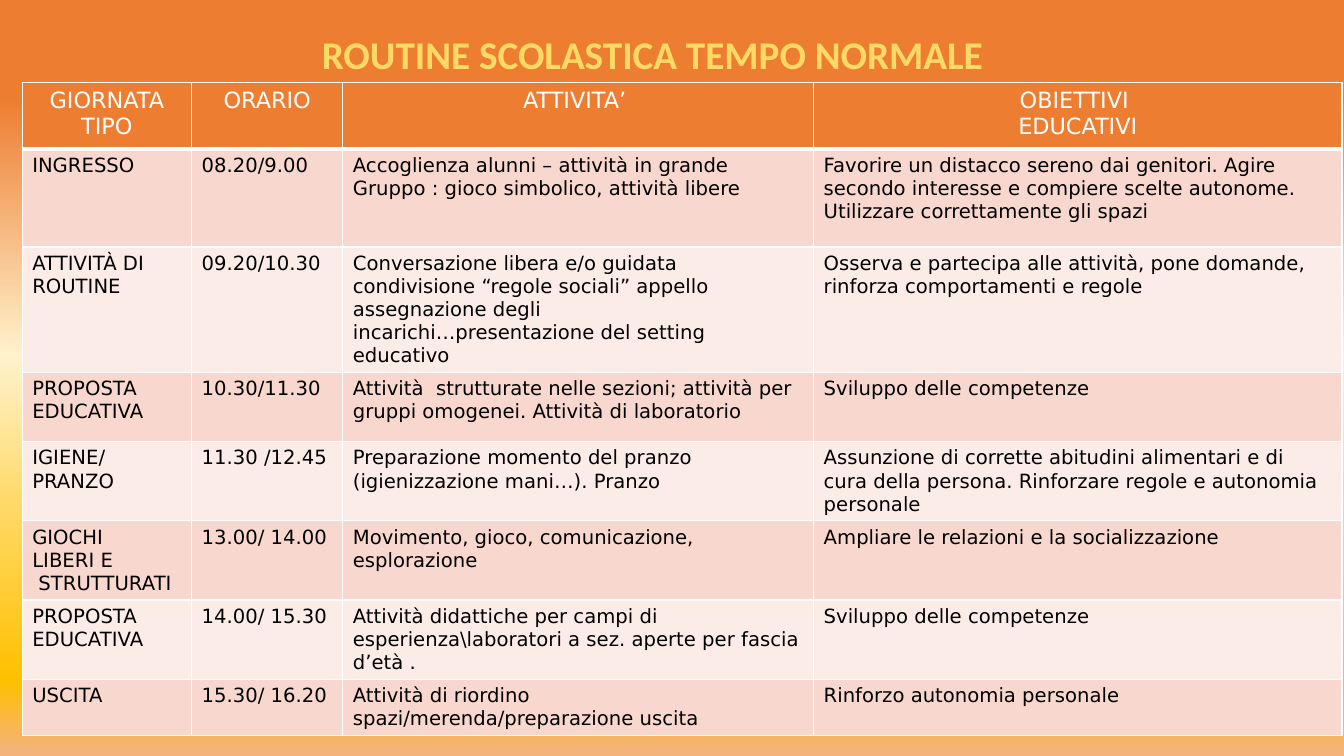
from dataclasses import dataclass

from lxml.etree import SubElement
from pptx import Presentation
from pptx.dml.color import RGBColor as Color
from pptx.enum.text import MSO_ANCHOR as Anchor, MSO_AUTO_SIZE as AutoSize, PP_ALIGN as Align
from pptx.oxml.ns import qn
from pptx.slide import Slide
from pptx.table import _Cell as Cell
from pptx.text.text import TextFrame
from pptx.util import Inches, Pt


@dataclass(frozen=True)
class Theme:
    title_font: str = "Calibri"
    table_font: str = "DejaVu Sans"
    title_size: int = 28
    header_size: int = 16
    body_size: int = 14
    title: str = "FFD966"
    header_text: str = "FFFFFF"
    body_text: str = "000000"
    header_fill: str = "ED7D31"
    band_fills: tuple[str, str] = ("F8D7CE", "FCECE8")
    border: str = "FFFFFF"
    thin_border: int = 1
    thick_border: int = 3
    background: tuple[tuple[int, str], ...] = (
        (13, "ED7D31"), (47, "FFF2CC"), (67, "FFD966"), (90, "FFC000"), (100, "F4B183"),
    )


@dataclass(frozen=True)
class Moment:
    name: str
    hours: str
    activity: str
    goals: str
    height: float


@dataclass(frozen=True)
class CellStyle:
    size: int
    text: str
    fill: str
    align: Align
    bottom_border: int


THEME = Theme()
COLUMN_WIDTHS = (1.68, 1.5, 4.67, 5.24)
MOMENTS = (
    Moment("GIORNATA TIPO", "ORARIO", "ATTIVITA’ ", "OBIETTIVI \nEDUCATIVI", 0.66),
    Moment("INGRESSO", "08.20/9.00",
           "Accoglienza alunni – attività in grande Gruppo : gioco simbolico, attività libere",
           "Favorire un distacco sereno dai genitori. Agire\n"
           "secondo interesse e compiere scelte autonome.\n"
           "Utilizzare correttamente gli spazi", 0.97),
    Moment("ATTIVITÀ DI ROUTINE", "09.20/10.30",
           "Conversazione libera e/o guidata condivisione “regole sociali” appello "
           "assegnazione degli\nincarichi…presentazione del setting educativo",
           "Osserva e partecipa alle attività, pone domande, rinforza comportamenti e regole", 1.04),
    Moment("PROPOSTA EDUCATIVA", "10.30/11.30",
           "Attività  strutturate nelle sezioni; attività per\n"
           "gruppi omogenei. Attività di laboratorio",
           "Sviluppo delle competenze", 0.69),
    Moment("IGIENE/\nPRANZO", "11.30 /12.45",
           "Preparazione momento del pranzo (igienizzazione mani…). Pranzo",
           "Assunzione di corrette abitudini alimentari e di cura della persona. "
           "Rinforzare regole e autonomia personale", 0.76),
    Moment("GIOCHI\nLIBERI E\n STRUTTURATI", "13.00/ 14.00",
           "Movimento, gioco, comunicazione, esplorazione",
           "Ampliare le relazioni e la socializzazione", 0.76),
    Moment("PROPOSTA EDUCATIVA", "14.00/ 15.30",
           "Attività didattiche per campi di esperienza\\laboratori a sez. aperte per fascia d’età .",
           "Sviluppo delle competenze", 0.76),
    Moment("USCITA", "15.30/ 16.20",
           "Attività di riordino spazi/merenda/preparazione uscita",
           "Rinforzo autonomia personale", 0.35),
)


def format_text(frame: TextFrame, font_values: dict, color: str, align: Align) -> None:
    for paragraph in frame.paragraphs:
        paragraph.alignment = align
        for run in paragraph.runs:
            for name, value in font_values.items():
                setattr(run.font, name, value)
            run.font.color.rgb = Color.from_string(color)


def paint_background(slide: Slide) -> None:
    fill = slide.background.fill
    fill.gradient()
    fill.gradient_angle = 270
    stops = next(slide.element.iter(qn("a:gsLst")))
    for stop in list(stops):
        stops.remove(stop)
    for position, color in THEME.background:
        stop = SubElement(stops, qn("a:gs"), pos=str(position * 1000))
        SubElement(stop, qn("a:srgbClr"), val=color)


def add_title(slide: Slide) -> None:
    title = slide.shapes.title
    position = {"left": -0.15, "top": 0.25, "width": 13.24, "height": 1.48}
    for name, value in position.items():
        setattr(title, name, Inches(value))
    frame = title.text_frame
    frame.text = "ROUTINE SCOLASTICA TEMPO NORMALE"
    frame_values = {"word_wrap": True, "auto_size": AutoSize.NONE, "vertical_anchor": Anchor.TOP}
    for name, value in frame_values.items():
        setattr(frame, name, value)
    font_values = {"name": THEME.title_font, "size": Pt(THEME.title_size), "bold": True}
    format_text(frame, font_values, THEME.title, Align.CENTER)


def add_borders(cell: Cell, top: int, bottom: int) -> None:
    properties = cell._tc.get_or_add_tcPr()
    thin = THEME.thin_border
    for side, width in {"L": thin, "R": thin, "T": top, "B": bottom}.items():
        line = SubElement(properties, qn(f"a:ln{side}"), w=str(Pt(width)))
        SubElement(SubElement(line, qn("a:solidFill")), qn("a:srgbClr"), val=THEME.border)


def fill_cell(cell: Cell, text: str, style: CellStyle, top_border: int) -> None:
    cell.text = text
    font_values = {"name": THEME.table_font, "size": Pt(style.size), "bold": False}
    format_text(cell.text_frame, font_values, style.text, style.align)
    add_borders(cell, top_border, style.bottom_border)
    cell.fill.solid()
    cell.fill.fore_color.rgb = Color.from_string(style.fill)


def row_style(row: int) -> CellStyle:
    if row == 0:
        return CellStyle(THEME.header_size, THEME.header_text, THEME.header_fill,
                         Align.CENTER, THEME.thick_border)
    return CellStyle(THEME.body_size, THEME.body_text, THEME.band_fills[(row - 1) % 2],
                     Align.LEFT, THEME.thin_border)


def add_routine_table(slide: Slide) -> None:
    height = sum(moment.height for moment in MOMENTS)
    table = slide.shapes.add_table(
        len(MOMENTS), len(COLUMN_WIDTHS),
        Inches(0.22), Inches(0.82), Inches(sum(COLUMN_WIDTHS)), Inches(height),
    ).table
    for column, width in zip(table.columns, COLUMN_WIDTHS):
        column.width = Inches(width)
    top_border = THEME.thin_border
    for index, moment in enumerate(MOMENTS):
        table.rows[index].height = Inches(moment.height)
        style = row_style(index)
        texts = (moment.name, moment.hours, moment.activity, moment.goals)
        for cell, text in zip(table.rows[index].cells, texts):
            fill_cell(cell, text, style, top_border)
        top_border = style.bottom_border


def main() -> None:
    presentation = Presentation()
    presentation.slide_width = Inches(13.33)
    presentation.slide_height = Inches(7.5)
    slide = presentation.slides.add_slide(presentation.slide_layouts.get_by_name("Title Only"))
    paint_background(slide)
    add_title(slide)
    add_routine_table(slide)
    presentation.save("out.pptx")


if __name__ == "__main__":
    main()
